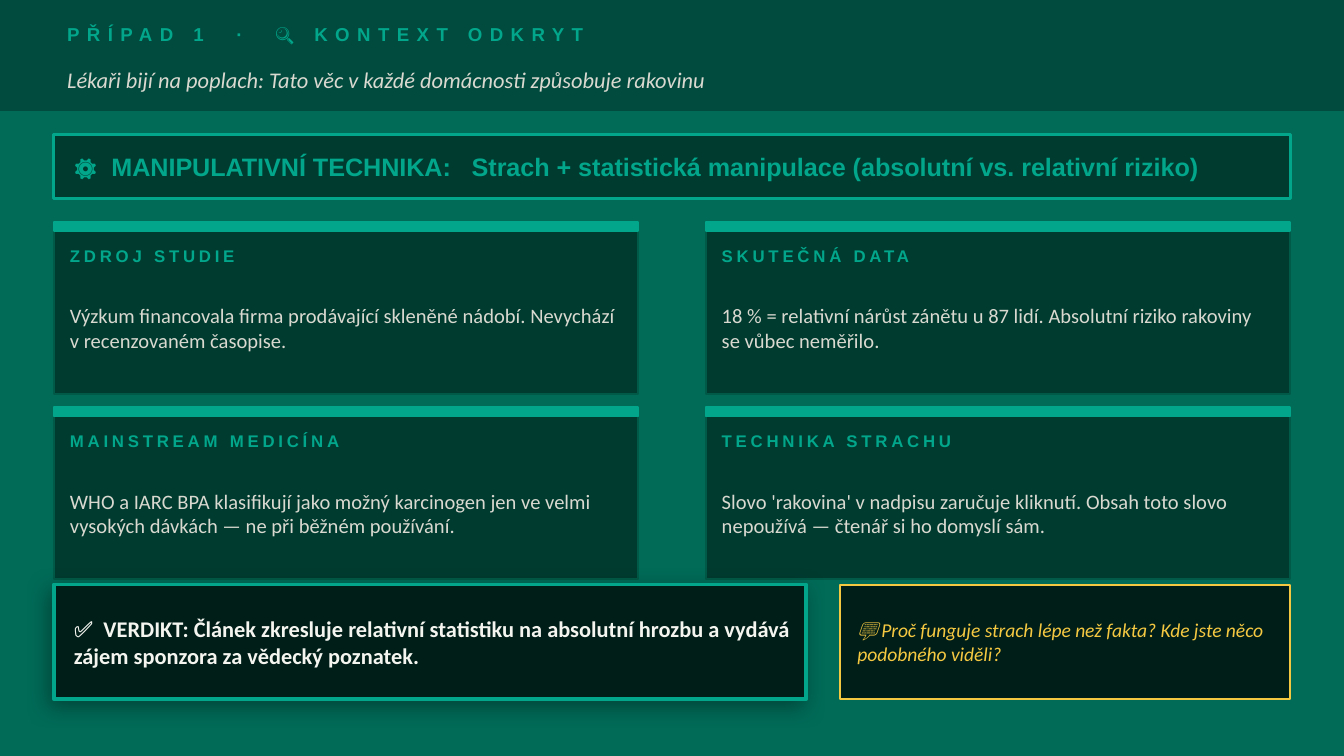
from dataclasses import dataclass
from typing import Optional

from lxml import etree
from pptx import Presentation
from pptx import util as u
from pptx.dml import color
from pptx.enum import shapes, text
from pptx.oxml import ns


@dataclass(frozen=True)
class Theme:
    background: str = "016B58"
    header: str = "014A3E"
    panel: str = "003B30"
    panel_edge: str = "005A47"
    dark: str = "001E18"
    accent: str = "02A68A"
    body: str = "D9D9D0"
    bright: str = "F5F5F0"
    yellow: str = "F5C842"
    heading_font: str = "Arial"
    body_font: str = "Calibri"
    label_size: float = 9
    header_size: float = 10
    question_size: float = 10.5
    body_size: float = 11
    emphasis_size: float = 12
    technique_size: float = 13.5


@dataclass(frozen=True)
class Box:
    left: float
    top: float
    width: float
    height: float

    def lengths(self) -> tuple:
        return tuple(u.Inches(value) for value in (self.left, self.top, self.width, self.height))


@dataclass(frozen=True)
class Style:
    font: str
    size: float
    color: str
    bold: bool = False
    italic: bool = False
    spacing: float = 0


@dataclass(frozen=True)
class Card:
    title: str
    body: str


THEME = Theme()
HEADER = Style(THEME.heading_font, THEME.header_size, THEME.accent, bold=True, spacing=4)
SUBTITLE = Style(THEME.body_font, THEME.emphasis_size, THEME.body, italic=True)
TECHNIQUE = Style(THEME.heading_font, THEME.technique_size, THEME.accent, bold=True)
LABEL = Style(THEME.heading_font, THEME.label_size, THEME.accent, bold=True, spacing=2)
BODY = Style(THEME.body_font, THEME.body_size, THEME.body)
VERDICT = Style(THEME.body_font, THEME.emphasis_size, THEME.bright, bold=True)
QUESTION = Style(THEME.body_font, THEME.question_size, THEME.yellow, italic=True)

CARDS = (
    Card("ZDROJ STUDIE",
         "Výzkum financovala firma prodávající skleněné nádobí. Nevychází v recenzovaném časopise."),
    Card("SKUTEČNÁ DATA",
         "18 % = relativní nárůst zánětu u 87 lidí. Absolutní riziko rakoviny se vůbec neměřilo."),
    Card("MAINSTREAM MEDICÍNA",
         "WHO a IARC BPA klasifikují jako možný karcinogen jen ve velmi vysokých dávkách"
         " — ne při běžném používání."),
    Card("TECHNIKA STRACHU",
         "Slovo 'rakovina' v nadpisu zaručuje kliknutí. Obsah toto slovo nepoužívá"
         " — čtenář si ho domyslí sám."),
)
MARGIN = 0.4
CARD_TOP = 1.65
CARD_WIDTH, CARD_HEIGHT = 4.35, 1.28
COLUMN_GAP, ROW_GAP = 0.5, 0.1
CARD_PADDING = 0.12


def add_panel(slide, box: Box, fill: str, line: str, line_width: float = 1):
    shape = slide.shapes.add_shape(shapes.MSO_SHAPE.RECTANGLE, *box.lengths())
    shape.shadow.inherit = False
    shape.fill.solid()
    shape.fill.fore_color.rgb = color.RGBColor.from_string(fill)
    shape.line.color.rgb = color.RGBColor.from_string(line)
    shape.line.width = u.Pt(line_width)
    return shape


def add_shadow(shape, blur: float, distance: float, angle: int, opacity: int) -> None:
    effects = shape._element.spPr.find(ns.qn("a:effectLst"))
    shadow = etree.SubElement(
        effects, ns.qn("a:outerShdw"), blurRad=str(u.Pt(blur)), dist=str(u.Pt(distance)),
        dir=str(angle * 60000), algn="bl", rotWithShape="0")
    tint = etree.SubElement(shadow, ns.qn("a:srgbClr"), val="000000")
    etree.SubElement(tint, ns.qn("a:alpha"), val=str(opacity * 1000))


def add_text(slide, box: Box, words: str, style: Style,
             tabs: Optional[tuple[float, ...]] = None) -> None:
    frame = slide.shapes.add_textbox(*box.lengths()).text_frame
    frame.word_wrap = True
    frame.vertical_anchor = text.MSO_ANCHOR.MIDDLE
    frame.margin_left = frame.margin_top = frame.margin_right = frame.margin_bottom = 0
    frame.text = words
    paragraph = frame.paragraphs[0]
    if tabs:
        tab_list = etree.SubElement(paragraph._p.get_or_add_pPr(), ns.qn("a:tabLst"))
        for position in tabs:
            etree.SubElement(tab_list, ns.qn("a:tab"), pos=str(u.Inches(position)), algn="l")
    for run in paragraph.runs:
        run.font.name = style.font
        run.font.size = u.Pt(style.size)
        run.font.bold = style.bold
        run.font.italic = style.italic
        run.font.color.rgb = color.RGBColor.from_string(style.color)
        if style.spacing:
            run._r.get_or_add_rPr().set("spc", str(int(style.spacing * 100)))


def add_card(slide, card: Card, left: float, top: float) -> None:
    text_left, text_width = left + CARD_PADDING, CARD_WIDTH - 2 * CARD_PADDING
    add_panel(slide, Box(left, top, CARD_WIDTH, CARD_HEIGHT), THEME.panel, THEME.panel_edge)
    add_panel(slide, Box(left, top, CARD_WIDTH, 0.07), THEME.accent, THEME.accent)
    add_text(slide, Box(text_left, top + CARD_PADDING, text_width, 0.26), card.title, LABEL)
    add_text(slide, Box(text_left, top + 0.4, text_width, 0.78), card.body, BODY)


def main() -> None:
    presentation = Presentation()
    presentation.slide_width = u.Inches(10)
    presentation.slide_height = u.Inches(10 * 9 / 16)
    slide = presentation.slides.add_slide(presentation.slide_layouts[6])
    slide.background.fill.solid()
    slide.background.fill.fore_color.rgb = color.RGBColor.from_string(THEME.background)

    add_panel(slide, Box(0, 0, 10, 0.82), THEME.header, THEME.header)
    add_text(slide, Box(0.5, 0.08, 9, 0.35), "PŘÍPAD 1\t·\t🔍 KONTEXT ODKRYT", HEADER, (1.26, 1.55))
    add_text(slide, Box(0.5, 0.42, 9, 0.35),
             "Lékaři bijí na poplach: Tato věc v každé domácnosti způsobuje rakovinu", SUBTITLE)

    add_panel(slide, Box(MARGIN, 1, 9.2, 0.48), THEME.panel, THEME.accent, 1.5)
    add_text(slide, Box(0.55, 1, 9, 0.48),
             "⚙️\tMANIPULATIVNÍ TECHNIKA:\t"
             "Strach + statistická manipulace (absolutní vs. relativní riziko)",
             TECHNIQUE, (0.28, 2.96))

    for index, card in enumerate(CARDS):
        row, column = divmod(index, 2)
        add_card(slide, card, MARGIN + column * (CARD_WIDTH + COLUMN_GAP),
                 CARD_TOP + row * (CARD_HEIGHT + ROW_GAP))

    verdict = add_panel(slide, Box(MARGIN, 4.35, 5.6, 0.85), THEME.dark, THEME.accent, 2)
    add_shadow(verdict, blur=12, distance=4, angle=135, opacity=35)
    add_text(slide, Box(0.55, 4.35, 5.4, 0.85),
             "✅\tVERDIKT: Článek zkresluje relativní statistiku na absolutní hrozbu"
             " a vydává zájem sponzora za vědecký poznatek.", VERDICT, (0.22,))

    add_panel(slide, Box(6.25, 4.35, 3.35, 0.85), THEME.dark, THEME.yellow)
    add_text(slide, Box(6.38, 4.35, 3.1, 0.85),
             "💬 Proč funguje strach lépe než fakta? Kde jste něco podobného viděli?", QUESTION)

    presentation.save("out.pptx")


if __name__ == "__main__":
    main()
